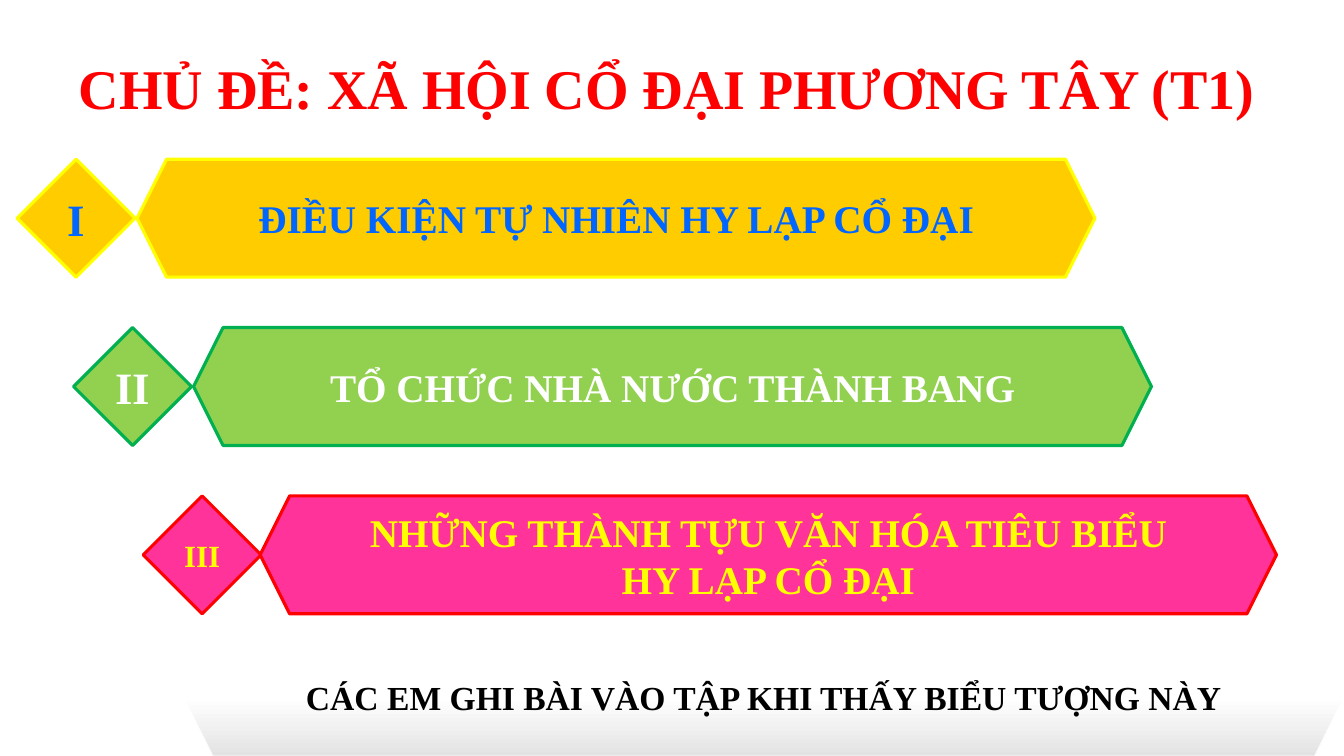
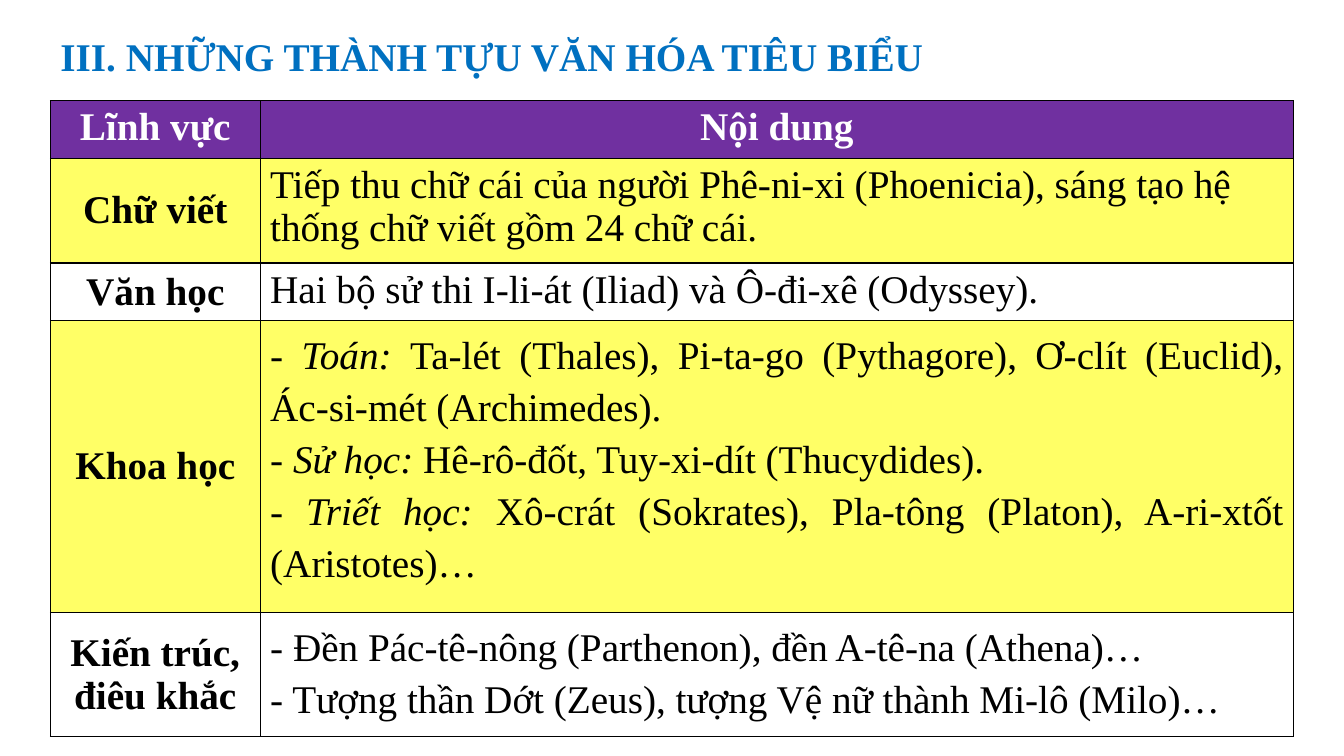
from dataclasses import dataclass

import lxml.etree
import pptx
import pptx.dml.color
import pptx.enum.shapes
import pptx.enum.text
import pptx.oxml.ns
import pptx.util

Inches = pptx.util.Inches
Pt = pptx.util.Pt
SHAPE = pptx.enum.shapes.MSO_SHAPE
ALIGN = pptx.enum.text.PP_ALIGN
ANCHOR = pptx.enum.text.MSO_ANCHOR


@dataclass(frozen=True)
class Theme:
    font: str = "Times New Roman"
    white: str = "FFFFFF"
    black: str = "000000"
    red: str = "FF0000"
    blue: str = "0070C0"
    purple: str = "7030A0"
    pale_yellow: str = "FFFF66"
    grey: str = "E3E3E3"
    topic: int = 40
    numeral: int = 32
    small_numeral: int = 22
    body: int = 28
    note: int = 24
    outline: float = 2.25


T = Theme()

# Agenda: numeral, size, heading, left, heading left, heading width, fill, line, text
AGENDA = [
    ("I", T.numeral, "ĐIỀU KIỆN TỰ NHIÊN HY LẠP CỔ ĐẠI",
     0.17, 1.36, 9.5, "FFCC00", "FFFF00", "0066FF"),
    ("II", T.numeral, "TỔ CHỨC NHÀ NƯỚC THÀNH BANG",
     0.73, 1.92, 9.5, "92D050", "00B050", T.white),
    ("III", T.small_numeral, "NHỮNG THÀNH TỰU VĂN HÓA TIÊU BIỂU HY LẠP CỔ ĐẠI",
     1.42, 2.58, 10.08, "FF3399", T.red, "FFFF00"),
]
AGENDA_TOP, AGENDA_STEP, BAR_HEIGHT = 1.58, 1.67, 1.17

# Table rows: field, height, line spacing, paragraphs of (italic lead, text)
ACHIEVEMENTS = [
    ("Chữ viết", 1.04, None, [
        ("", "Tiếp thu chữ cái của người Phê-ni-xi (Phoenicia), sáng tạo hệ "
             "thống chữ viết gồm 24 chữ cái.")]),
    ("Văn học", 0.57, None, [
        ("", "Hai bộ sử thi I-li-át (Iliad) và Ô-đi-xê (Odyssey).")]),
    ("Khoa học", 2.9, 1.2, [
        ("- Toán: ", "Ta-lét (Thales), Pi-ta-go (Pythagore), Ơ-clít (Euclid), "
                     "Ác-si-mét (Archimedes)."),
        ("- Sử học: ", "Hê-rô-đốt, Tuy-xi-dít (Thucydides)."),
        ("- Triết học: ", "Xô-crát (Sokrates), Pla-tông (Platon), A-ri-xtốt "
                          "(Aristotes)…")]),
    ("Kiến trúc, điêu khắc", 1.23, 1.2, [
        ("", "- Đền Pác-tê-nông (Parthenon), đền A-tê-na (Athena)…"),
        ("", "- Tượng thần Dớt (Zeus), tượng Vệ nữ thành Mi-lô (Milo)…")]),
]
HEADER_HEIGHT = 0.57


def rgb(value):
    return pptx.dml.color.RGBColor.from_string(value)


def style_run(r, size, color, bold=True, italic=False):
    f = r.font
    f.name, f.size, f.bold, f.italic = T.font, Pt(size), bold, italic
    f.color.rgb = rgb(color)


def set_line(tf, text, size, color, align=ALIGN.CENTER):
    tf.text = text
    p = tf.paragraphs[0]
    p.alignment = align
    style_run(p.runs[0], size, color)
    return p


def add_title(s, text, box, size, color, align=ALIGN.CENTER, spacing=1.0, wrap=True):
    sp = s.shapes.title
    sp.left, sp.top, sp.width, sp.height = map(Inches, box)
    tf = sp.text_frame
    tf.auto_size = pptx.enum.text.MSO_AUTO_SIZE.NONE
    tf.word_wrap = wrap
    tf.vertical_anchor = ANCHOR.MIDDLE
    set_line(tf, text, size, color, align).line_spacing = spacing


def add_label(s, kind, box, text, size, color, line, line_width=T.outline):
    sp = s.shapes.add_shape(kind, *map(Inches, box))
    sp.shadow.inherit = False
    sp.line.color.rgb = rgb(line)
    sp.line.width = Pt(line_width)
    tf = sp.text_frame
    tf.word_wrap = True
    tf.vertical_anchor = ANCHOR.MIDDLE
    set_line(tf, text, size, color)
    return sp


def add_agenda_item(s, top, item):
    numeral, size, heading, left, bar_left, bar_width, fill, line, color = item
    parts = [
        (SHAPE.DIAMOND, left, BAR_HEIGHT, numeral, size),
        (SHAPE.HEXAGON, bar_left, bar_width, heading, T.body),
    ]
    for kind, x, width, text, text_size in parts:
        sp = add_label(s, kind, (x, top, width, BAR_HEIGHT), text, text_size, color, line)
        sp.fill.solid()
        sp.fill.fore_color.rgb = rgb(fill)


def add_note(s, box, text):
    sp = add_label(s, SHAPE.HEXAGON, box, text, T.note, T.black, T.white, 0.5)
    sp.fill.gradient()
    sp.fill.gradient_angle = 270
    stops = sp.fill.gradient_stops
    for stop, position, color in zip(stops, (0.5, 1), (T.white, T.grey)):
        stop.position = position
        stop.color.rgb = rgb(color)


def style_cell(cell, fill, anchor):
    # Borders come before the fill in the cell properties
    tc_pr = cell._tc.get_or_add_tcPr()
    qn = pptx.oxml.ns.qn
    for side in ("a:lnL", "a:lnR", "a:lnT", "a:lnB"):
        ln = lxml.etree.SubElement(tc_pr, qn(side), w=str(Pt(1)))
        solid = lxml.etree.SubElement(ln, qn("a:solidFill"))
        lxml.etree.SubElement(solid, qn("a:srgbClr"), val=T.black)
    cell.fill.solid()
    cell.fill.fore_color.rgb = rgb(fill)
    cell.vertical_anchor = anchor


def fill_content(tf, paragraphs, spacing):
    for i, parts in enumerate(paragraphs):
        p = tf.add_paragraph() if i else tf.paragraphs[0]
        if spacing:
            p.line_spacing = spacing
            p.alignment = ALIGN.JUSTIFY
        for text, italic in zip(parts, (True, False)):
            if text:
                r = p.add_run()
                r.text = text
                style_run(r, T.body, T.black, bold=False, italic=italic)


def add_achievements(s, left, top, widths):
    heights = [HEADER_HEIGHT] + [row[1] for row in ACHIEVEMENTS]
    table = s.shapes.add_table(len(heights), len(widths), Inches(left), Inches(top),
                               Inches(sum(widths)), Inches(sum(heights))).table
    table.first_row = table.horz_banding = False
    for col, width in zip(table.columns, widths):
        col.width = Inches(width)
    for row, height in zip(table.rows, heights):
        row.height = Inches(height)

    # Header row
    for i, text in enumerate(("Lĩnh vực", "Nội dung")):
        cell = table.cell(0, i)
        style_cell(cell, T.purple, ANCHOR.TOP)
        set_line(cell.text_frame, text, T.body, T.white)

    # Body rows in alternating colours
    for i, (field, _, spacing, paragraphs) in enumerate(ACHIEVEMENTS, 1):
        fill = T.pale_yellow if i % 2 else T.white
        name, content = table.cell(i, 0), table.cell(i, 1)
        style_cell(name, fill, ANCHOR.MIDDLE)
        set_line(name.text_frame, field, T.body, T.black)
        style_cell(content, fill, ANCHOR.TOP)
        fill_content(content.text_frame, paragraphs, spacing)


def build_agenda_slide(prs):
    s = prs.slides.add_slide(prs.slide_layouts[5])
    add_title(s, "CHỦ ĐỀ: XÃ HỘI CỔ ĐẠI PHƯƠNG TÂY (T1)", (0.62, 0.48, 11.99, 0.77),
              T.topic, T.red, wrap=False)
    for i, item in enumerate(AGENDA):
        add_agenda_item(s, AGENDA_TOP + i * AGENDA_STEP, item)
    add_note(s, (1.82, 6.33, 11.51, BAR_HEIGHT),
             "CÁC EM GHI BÀI VÀO TẬP KHI THẤY BIỂU TƯỢNG NÀY")


def build_table_slide(prs):
    s = prs.slides.add_slide(prs.slide_layouts[5])
    add_title(s, "III. NHỮNG THÀNH TỰU VĂN HÓA TIÊU BIỂU", (0.5, 0.2, 9.58, 0.62),
              T.body, T.blue, ALIGN.LEFT, spacing=1.2)
    add_achievements(s, 0.5, 1, (2.08, 10.25))


def main():
    prs = pptx.Presentation()
    prs.slide_width, prs.slide_height = Inches(13.33), Inches(7.5)
    build_agenda_slide(prs)
    build_table_slide(prs)
    prs.save("out.pptx")


if __name__ == "__main__":
    main()
